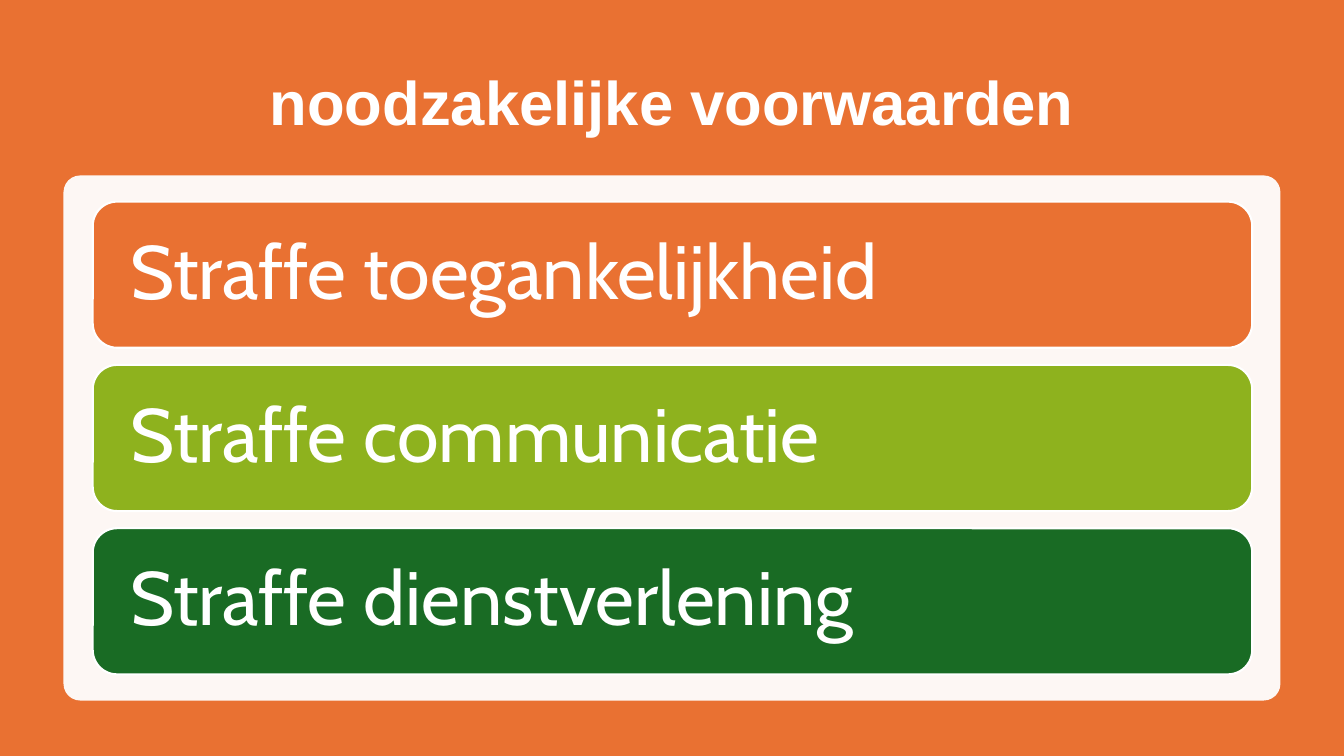
from lxml.etree import SubElement
from pptx import Presentation
from pptx.dml.color import RGBColor
from pptx.enum.shapes import MSO_SHAPE
from pptx.enum.text import MSO_ANCHOR, PP_ALIGN
from pptx.oxml.ns import qn
from pptx.util import Inches, Pt

# Content
TITLE = "noodzakelijke voorwaarden"
CONDITIONS = [
    ("Straffe toegankelijkheid", "E97132"),
    ("Straffe communicatie", "8EB21E"),
    ("Straffe dienstverlening", "196B24"),
]
ORANGE, WHITE = "E97132", "FFFFFF"

# Layout in inches
WIDTH, HEIGHT = 13.33, 7.5
LEFT, BAR_WIDTH = 0.92, 11.5
BAR_TOP, BAR_HEIGHT, BAR_STEP = 2, 1.45, 1.62
BAR_INSET = 0.3


def color(hex_value):
    return RGBColor.from_string(hex_value)


def add_box(kind, left, top, width, height, fill, line=None):
    sp = s.shapes.add_shape(kind, Inches(left), Inches(top),
                            Inches(width), Inches(height))
    sp.shadow.inherit = False
    sp.fill.solid()
    sp.fill.fore_color.rgb = color(fill)
    if line:
        sp.line.color.rgb = color(line)
        sp.line.width = Pt(1.5)
    else:
        sp.line.fill.background()
    return sp


def write(sp, text, font, size, align, inset, bold=False):
    tf = sp.text_frame
    tf.word_wrap = True
    tf.vertical_anchor = MSO_ANCHOR.MIDDLE
    tf.margin_left = tf.margin_right = Inches(inset)
    p = tf.paragraphs[0]
    p.alignment = align
    p.line_spacing = 0.9
    r = p.add_run()
    r.text = text
    r.font.name = font
    r.font.size = Pt(size)
    r.font.bold = bold
    r.font.color.rgb = color(WHITE)


prs = Presentation()
prs.slide_width, prs.slide_height = Inches(WIDTH), Inches(HEIGHT)
s = prs.slides.add_slide(prs.slide_layouts[6])

# Backdrop and title
add_box(MSO_SHAPE.RECTANGLE, 0, 0, WIDTH, HEIGHT, ORANGE)
title = s.shapes.add_textbox(Inches(LEFT), Inches(0.5),
                             Inches(BAR_WIDTH), Inches(1.1))
write(title, TITLE, "Arial", 44, PP_ALIGN.CENTER, 0.1, bold=True)

# Translucent panel
panel = add_box(MSO_SHAPE.ROUNDED_RECTANGLE, 0.63, 1.74, 12.07, 5.21, WHITE)
panel.adjustments[0] = 0.032
fill_color = panel.fill._xPr.find(qn("a:solidFill"))[0]
SubElement(fill_color, qn("a:alpha")).set("val", "95000")

# One bar per condition
for i, (text, fill) in enumerate(CONDITIONS):
    bar = add_box(MSO_SHAPE.ROUNDED_RECTANGLE, LEFT, BAR_TOP + i * BAR_STEP,
                  BAR_WIDTH, BAR_HEIGHT, fill, line=WHITE)
    write(bar, text, "Cabin", 54, PP_ALIGN.LEFT, BAR_INSET)

prs.save("out.pptx")
